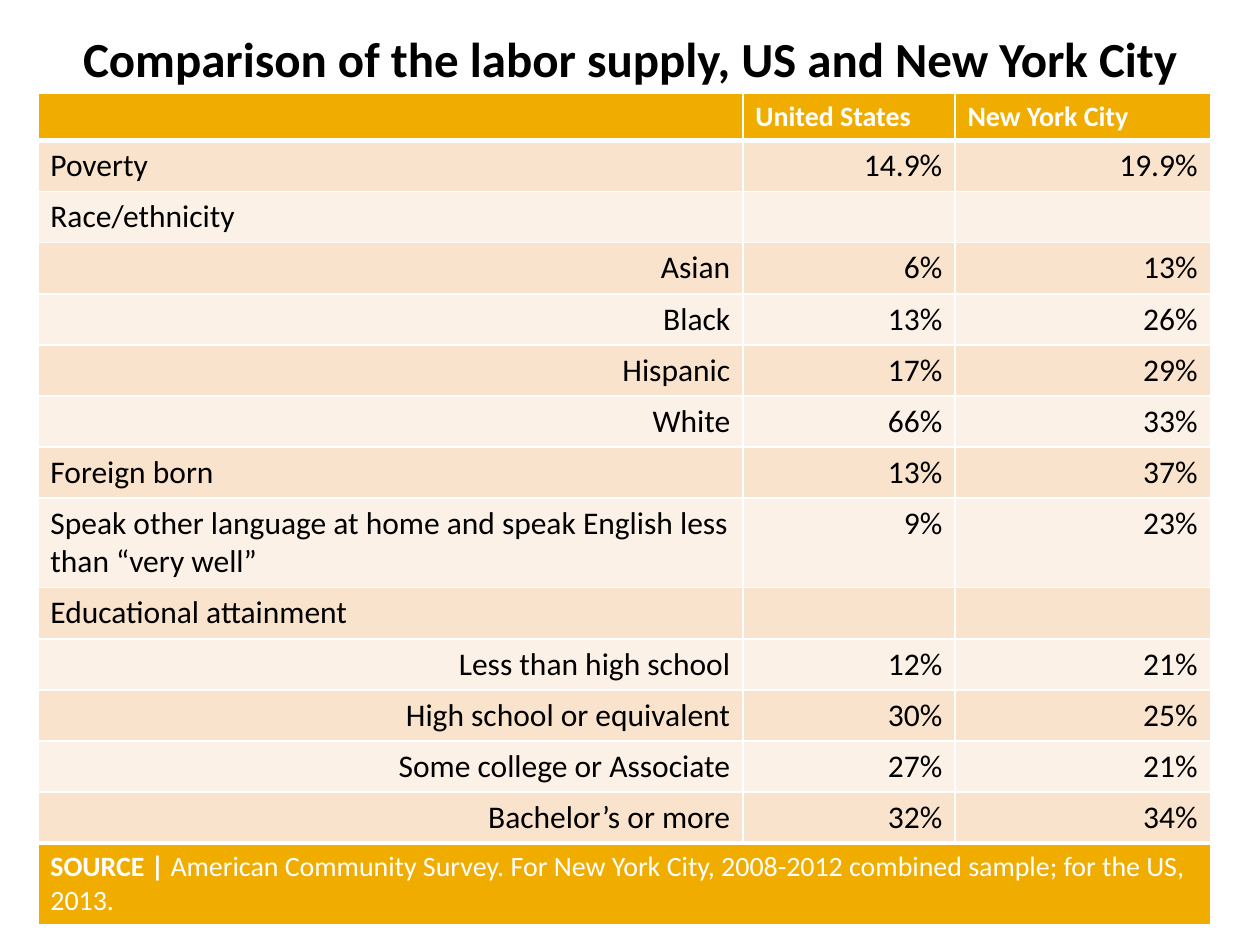
import pptx
import pptx.dml.color
import pptx.enum.text
import pptx.oxml.ns
import pptx.util
from lxml import etree

Pt = pptx.util.Pt
ALIGN = pptx.enum.text.PP_ALIGN
COLORS = {
    "accent": "F0AD00",
    "band_dark": "F9E3CC",
    "band_light": "FCF1E7",
    "text": "000000",
    "white": "FFFFFF",
}
TITLE_FORMAT = {"name": "Calibri", "size": Pt(28), "bold": True}
HEADER_FORMAT = {"name": "Calibri", "size": Pt(16), "bold": True}
SOURCE_FORMAT = {"name": "Calibri", "size": Pt(16), "bold": False}
BODY_FORMAT = {"name": "Calibri", "size": Pt(18), "bold": False}

HEADERS = ["", "United States", "New York City"]
MAIN_ROWS = {
    "Poverty",
    "Race/ethnicity",
    "Foreign born",
    "Speak other language at home and speak English less than “very well”",
    "Educational attainment",
}
ROWS = [
    ("Poverty", "14.9%", "19.9%"),
    ("Race/ethnicity", "", ""),
    ("Asian", "6%", "13%"),
    ("Black", "13%", "26%"),
    ("Hispanic", "17%", "29%"),
    ("White", "66%", "33%"),
    ("Foreign born", "13%", "37%"),
    ("Speak other language at home and speak English less than “very well”", "9%", "23%"),
    ("Educational attainment", "", ""),
    ("Less than high school", "12%", "21%"),
    ("High school or equivalent", "30%", "25%"),
    ("Some college or Associate", "27%", "21%"),
    ("Bachelor’s or more", "32%", "34%"),
]
SOURCE = "American Community Survey. For New York City, 2008-2012 combined sample; for the US, 2013."
COLUMN_WIDTHS = [402.9, 121.2, 145.9]
HEADER_HEIGHT, ROW_HEIGHT, TALL_HEIGHT, SOURCE_HEIGHT = 26.7, 29.2, 51, 44.6
TALL_ROW = 8


def rgb(color):
    return pptx.dml.color.RGBColor.from_string(COLORS[color])


def add_text(paragraph, text, formats, color):
    if not text:
        size = str(int(formats["size"].pt * 100))
        etree.SubElement(paragraph._p, pptx.oxml.ns.qn("a:endParaRPr"), sz=size)
        return
    run = paragraph.add_run()
    run.text = text
    for name, value in formats.items():
        setattr(run.font, name, value)
    run.font.color.rgb = rgb(color)


def style_cell(cell, fill, top=1, bottom=1):
    properties = cell._tc.get_or_add_tcPr()
    for side, width in {"L": 1, "R": 1, "T": top, "B": bottom}.items():
        line = etree.SubElement(properties, pptx.oxml.ns.qn("a:ln" + side), w=str(Pt(width)))
        solid = etree.SubElement(line, pptx.oxml.ns.qn("a:solidFill"))
        etree.SubElement(solid, pptx.oxml.ns.qn("a:srgbClr"), val=COLORS["white"])
    cell.fill.solid()
    cell.fill.fore_color.rgb = rgb(fill)


def add_title(slide, left, top, width, height):
    title = slide.shapes.title
    box = {"left": left, "top": top, "width": width, "height": height}
    for name, value in box.items():
        setattr(title, name, Pt(value))
    title.text_frame.word_wrap = True
    title.text_frame.auto_size = pptx.enum.text.MSO_AUTO_SIZE.NONE
    paragraph = title.text_frame.paragraphs[0]
    paragraph.alignment = ALIGN.CENTER
    add_text(paragraph, "Comparison of the labor supply, US and New York City", TITLE_FORMAT, "text")


def add_labor_table(slide, left, top, width, height):
    last = len(ROWS) + 1
    table = slide.shapes.add_table(
        last + 1, len(HEADERS), Pt(left), Pt(top), Pt(width), Pt(height)
    ).table
    for column, column_width in zip(table.columns, COLUMN_WIDTHS):
        column.width = Pt(column_width)
    heights = {0: HEADER_HEIGHT, TALL_ROW: TALL_HEIGHT, last: SOURCE_HEIGHT}
    for index, row in enumerate(table.rows):
        row.height = Pt(heights.get(index, ROW_HEIGHT))

    for column, text in enumerate(HEADERS):
        cell = table.cell(0, column)
        style_cell(cell, "accent", bottom=3)
        add_text(cell.text_frame.paragraphs[0], text, HEADER_FORMAT, "white")

    for index, values in enumerate(ROWS, start=1):
        for column, text in enumerate(values):
            cell = table.cell(index, column)
            style_cell(
                cell,
                "band_dark" if index % 2 else "band_light",
                top=3 if index == 1 else 1,
                bottom=3 if index == last - 1 else 1,
            )
            paragraph = cell.text_frame.paragraphs[0]
            paragraph.alignment = ALIGN.LEFT if text in MAIN_ROWS else ALIGN.RIGHT
            add_text(paragraph, text, BODY_FORMAT, "text")

    for column in range(len(HEADERS)):
        style_cell(table.cell(last, column), "accent", top=3)
    source = table.cell(last, 0)
    source.merge(table.cell(last, len(HEADERS) - 1))
    paragraph = source.text_frame.paragraphs[0]
    add_text(paragraph, "SOURCE | ", HEADER_FORMAT, "white")
    add_text(paragraph, SOURCE, SOURCE_FORMAT, "white")


def main():
    presentation = pptx.Presentation()
    presentation.slide_width = Pt(720)
    presentation.slide_height = Pt(540)
    slide = presentation.slides.add_slide(presentation.slide_layouts[5])
    add_labor_table(slide, 21.6, 53.5, sum(COLUMN_WIDTHS), 468)
    add_title(slide, 0, 12.4, 720, 41.2)
    presentation.save("out.pptx")


if __name__ == "__main__":
    main()
